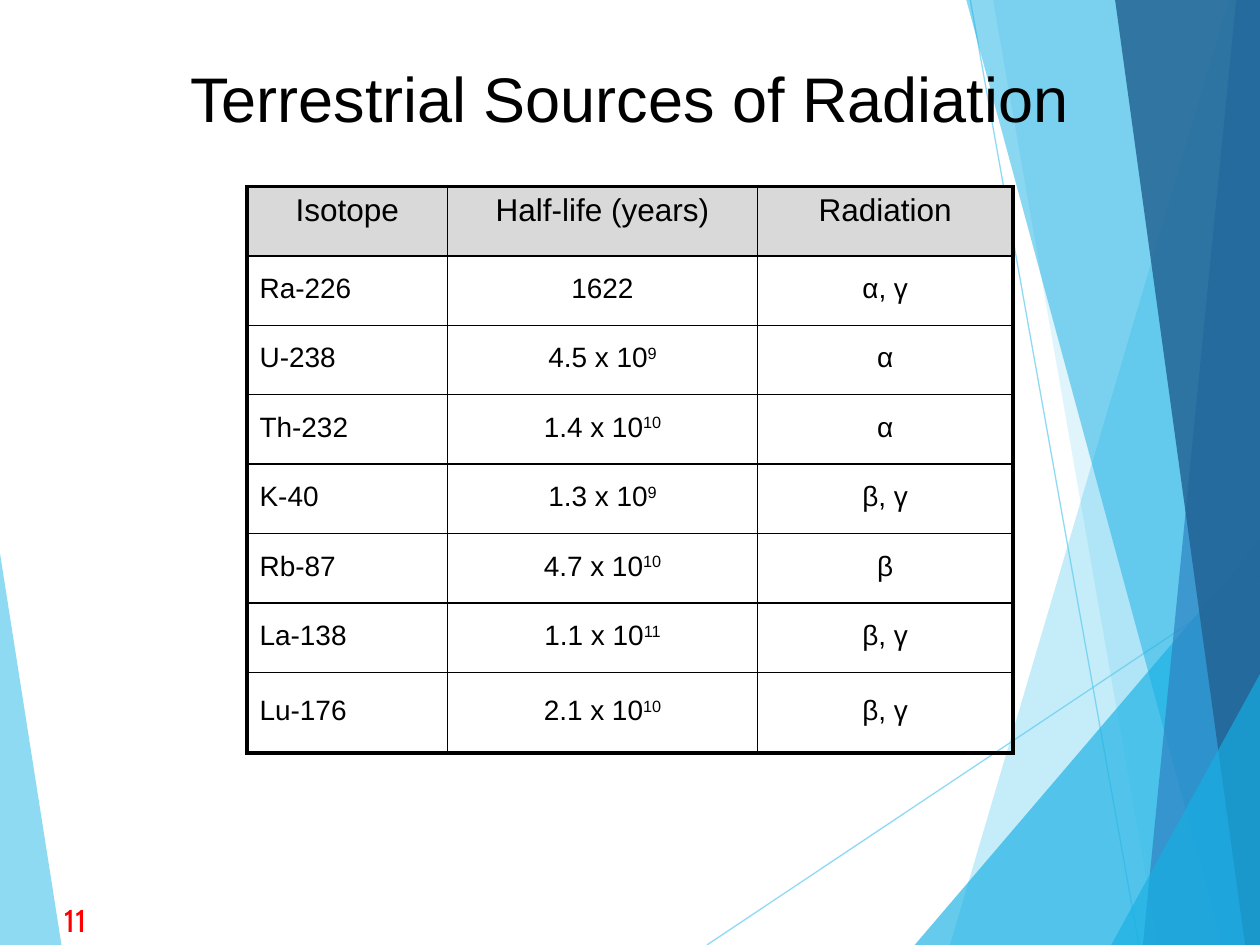
from lxml.etree import SubElement
from pptx import Presentation
from pptx.dml.color import RGBColor as RGB
from pptx.enum.shapes import MSO_CONNECTOR as Conn
from pptx.enum.text import MSO_ANCHOR as Anchor, PP_ALIGN as Align
from pptx.oxml import parse_xml
from pptx.oxml.ns import nsdecls, qn
from pptx.util import Cm, Pt

WIDE, HIGH = 25.4, 19.05

SKY = RGB(0x5F, 0xCB, 0xEF)
CYAN = RGB(0x17, 0xB0, 0xE4)
BLUE = RGB(0x2E, 0x83, 0xC3)
NAVY = RGB(0x22, 0x62, 0x92)
GRAY = RGB(0xD9, 0xD9, 0xD9)
BLACK = RGB(0, 0, 0)
RED = RGB(0xFF, 0, 0)

THIN, THICK = 1, 2.25


class Deck:
    font = "Arial"

    def __init__(self):
        self.prs = Presentation()
        self.prs.slide_width, self.prs.slide_height = Cm(WIDE), Cm(HIGH)
        self.slide = self.prs.slides.add_slide(self.prs.slide_layouts[5])
        self.shapes = self.slide.shapes

    def style(self, para, size, color=BLACK, font=None, align=Align.LEFT):
        para.alignment = align
        para.font.name = font or self.font
        para.font.size = Pt(size)
        para.font.color.rgb = color

    def fade(self, fill, color, alpha):
        fill.solid()
        fill.fore_color.rgb = color
        tint = next(fill._xPr.iter(qn("a:srgbClr")))
        SubElement(tint, qn("a:alpha"), val=str(alpha * 1000))

    def facet(self, points, color, alpha):
        spots = [(Cm(x), Cm(y)) for x, y in points]
        pen = self.shapes.build_freeform(*spots[0])
        pen.add_line_segments(spots[1:])
        shape = pen.convert_to_shape()
        shape.shadow.inherit = False
        shape.line.fill.background()
        self.fade(shape.fill, color, alpha)

    def line(self, x1, y1, x2, y2, color, alpha):
        line = self.shapes.add_connector(
            Conn.STRAIGHT, Cm(x1), Cm(y1), Cm(x2), Cm(y2))
        line.line.width = Pt(0.75)
        self.fade(line.line.fill, color, alpha)
        SubElement(line._element.spPr, qn("a:effectLst"))

    def title(self, text, x, y, w, h):
        box = self.shapes.title
        box.left, box.top, box.width, box.height = map(Cm, (x, y, w, h))
        box.text_frame.text = text
        self.style(box.text_frame.paragraphs[0], 36, align=Align.CENTER)
        self.shapes._spTree.append(box._element)  # in front of the facets

    def label(self, text, x, y, w, h, size, color, font):
        frame = self.shapes.add_textbox(*map(Cm, (x, y, w, h))).text_frame
        frame.word_wrap = True
        frame.text = text
        self.style(frame.paragraphs[0], size, color, font)

    def border(self, cell, sides):
        props = cell._tc.get_or_add_tcPr()
        for spot, (side, width) in enumerate(sides.items()):
            props.insert(spot, parse_xml(
                f'<a:ln{side} {nsdecls("a")} w="{Pt(width)}"><a:solidFill>'
                f'<a:srgbClr val="{BLACK}"/></a:solidFill></a:ln{side}>'))

    def cell(self, cell, text, head, align):
        para = cell.text_frame.paragraphs[0]
        self.style(para, 18 if head else 16, align=align)
        base, _, power = text.partition("^")
        para.add_run().text = base
        if power:
            run = para.add_run()
            run.text = power
            run.font._element.set("baseline", "30000")
        if head:
            cell.fill.solid()
            cell.fill.fore_color.rgb = GRAY
        else:
            cell.fill.background()
            cell.vertical_anchor = Anchor.MIDDLE
            para.line_spacing = 0.85

    def table(self, rows, x, y, widths, heights):
        table = self.shapes.add_table(
            len(rows), len(widths), Cm(x), Cm(y),
            Cm(sum(widths)), Cm(sum(heights))).table
        table.first_row = table.horz_banding = False
        for col, width in zip(table.columns, widths):
            col.width = Cm(width)
        for row, height in zip(table.rows, heights):
            row.height = Cm(height)
        last_r, last_c = len(rows) - 1, len(widths) - 1
        for r, row in enumerate(rows):
            for c, text in enumerate(row):
                cell = table.cell(r, c)
                left = r > 0 and c == 0
                self.cell(cell, text, r == 0,
                          Align.LEFT if left else Align.CENTER)
                edges = {"L": c == 0, "R": c == last_c,
                         "T": r == 0, "B": r == last_r}
                self.border(cell, {side: THICK if outer else THIN
                                   for side, outer in edges.items()})


# Right-hand facets: top x, top y, bottom x, colour, opacity
FACETS = [
    (24.77, 0, 19.15, SKY, 36),
    (20.02, 0, 23.34, SKY, 20),
    (WIDE, 10.9, 18.44, CYAN, 66),
    (19.48, 0, 24.64, CYAN, 50),
    (24.92, 0, 23.04, BLUE, 70),
    (22.48, 0, 25.1, NAVY, 82),
    (WIDE, 13.59, 22.4, CYAN, 66),
]

# "^" marks the start of an exponent
ROWS = [
    ("Isotope", "Half-life (years)", "Radiation"),
    ("Ra-226", "1622", "α, γ"),
    ("U-238", "4.5 x 10^9", "α"),
    ("Th-232", "1.4 x 10^10", "α"),
    ("K-40", "1.3 x 10^9", "β, γ"),
    ("Rb-87", "4.7 x 10^10", "β"),
    ("La-138", "1.1 x 10^11", "β, γ"),
    ("Lu-176", "2.1 x 10^10", "β, γ"),
]


def main():
    deck = Deck()

    # Backdrop
    deck.facet([(0, 11.15), (1.24, HIGH), (0, HIGH)], SKY, 70)
    deck.line(14.25, HIGH, WIDE, 11.61, SKY, 70)
    deck.line(19.56, 0, 22.96, HIGH, SKY, 70)
    for top_x, top_y, base_x, color, alpha in FACETS:
        points = [(top_x, top_y), (base_x, HIGH), (WIDE, HIGH), (WIDE, top_y)]
        deck.facet(list(dict.fromkeys(points)), color, alpha)

    # Isotope table
    deck.table(ROWS, 4.98, 3.76, [4.04, 6.25, 5.15], [1.4] * 7 + [1.63])

    # Title and page number
    deck.title("Terrestrial Sources of Radiation", 3.38, 1.07, 18.62, 1.78)
    deck.label("11", 1.04, 18.03, 1.32, 1.02, 18, RED, "Cabin")

    deck.prs.save("out.pptx")


if __name__ == "__main__":
    main()
